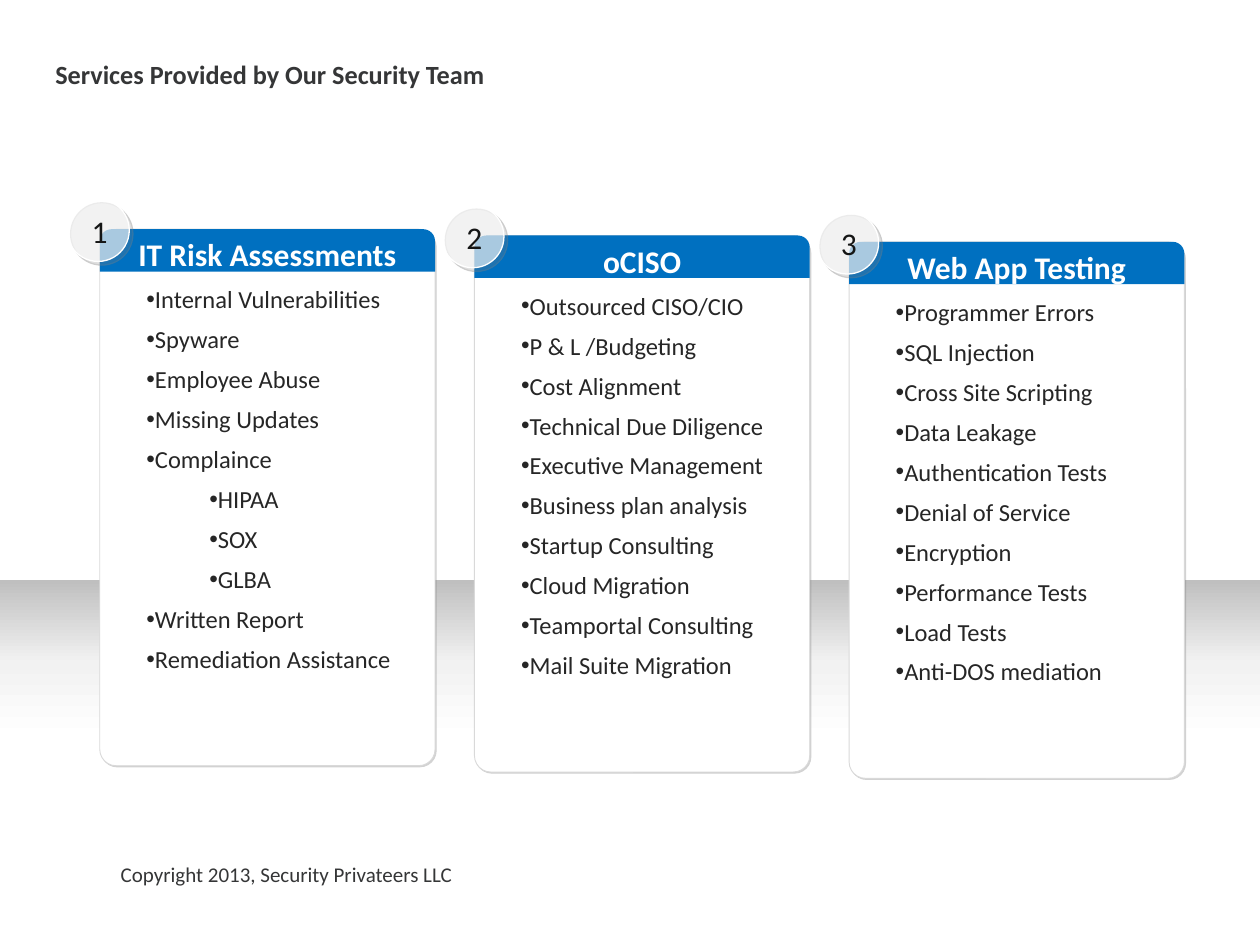
from lxml import etree
from pptx import Presentation
from pptx.dml.color import RGBColor
from pptx.enum.shapes import MSO_SHAPE
from pptx.enum.text import MSO_ANCHOR, MSO_AUTO_SIZE, PP_ALIGN
from pptx.oxml.ns import qn
from pptx.util import Pt

RECTANGLE = MSO_SHAPE.RECTANGLE
ROUNDED = MSO_SHAPE.ROUNDED_RECTANGLE
ROUND_TOP = MSO_SHAPE.ROUND_2_SAME_RECTANGLE
OVAL = MSO_SHAPE.OVAL
MIDDLE = MSO_ANCHOR.MIDDLE
GROW = MSO_AUTO_SIZE.SHAPE_TO_FIT_TEXT
CENTER = PP_ALIGN.CENTER
FONT = "Calibri"

CARD_LEFT, CARD_TOP = 57, 131
CARD_WIDTH, CARD_HEIGHT = 191.6, 306.6
STEP_RIGHT, STEP_DOWN = 214.1, 3.6
FADE_STOPS = [(0, "BFBFBF"), (26, "F2F2F2"), (50, "FFFFFF")]

SERVICES = [
    ("IT Risk Assessments", [
        ("Internal Vulnerabilities", 0), ("Spyware", 0), ("Employee Abuse", 0),
        ("Missing Updates", 0), ("Complaince", 0), ("HIPAA", 1), ("SOX", 1),
        ("GLBA", 1), ("Written Report", 0), ("Remediation Assistance", 0)]),
    ("oCISO", [
        ("Outsourced CISO/CIO", 0), ("P & L /Budgeting", 0),
        ("Cost Alignment", 0), ("Technical Due Diligence", 0),
        ("Executive Management", 0), ("Business plan analysis", 0),
        ("Startup Consulting", 0), ("Cloud Migration", 0),
        ("Teamportal Consulting", 0), ("Mail Suite Migration", 0)]),
    ("Web App Testing", [
        ("Programmer Errors", 0), ("SQL Injection", 0),
        ("Cross Site Scripting", 0), ("Data Leakage", 0),
        ("Authentication Tests", 0), ("Denial of Service", 0),
        ("Encryption", 0), ("Performance Tests", 0), ("Load Tests", 0),
        ("Anti-DOS mediation", 0)]),
]


def color(value):
    return RGBColor.from_string(value)


def apply(target, values):
    for name, value in values.items():
        setattr(target, name, value)


def add_color(parent, value, alpha=100):
    node = etree.SubElement(parent, qn("a:srgbClr"), val=value)
    if alpha < 100:
        etree.SubElement(node, qn("a:alpha"), val=str(alpha * 1000))


def add_shape(shapes, kind, place, fill, line=None, adjustments=()):
    shape = shapes.add_shape(kind, *map(Pt, place))
    shape.shadow.inherit = False
    for index, value in enumerate(adjustments):
        shape.adjustments[index] = value
    shape.fill.solid()
    shape.fill.fore_color.rgb = color(fill)
    if line:
        shape.line.color.rgb = color(line[0])
        shape.line.width = Pt(line[1])
    else:
        shape.line.fill.background()
    return shape


def add_shadow(shape, value, alpha, distance):
    effects = shape._element.spPr.find(qn("a:effectLst"))
    shadow = etree.SubElement(
        effects, qn("a:outerShdw"), blurRad="0", dist=str(Pt(distance)),
        dir="2700000", algn="tl", rotWithShape="0")
    add_color(shadow, value, alpha)


def set_transparency(shape, alpha):
    node = shape._element.spPr.find(qn("a:solidFill"))[0]
    etree.SubElement(node, qn("a:alpha"), val=str(alpha * 1000))


def set_fade(shape, stops):
    shape.fill.gradient()
    gradient = shape._element.spPr.find(qn("a:gradFill"))
    stop_list = gradient.find(qn("a:gsLst"))
    for old_stop in list(stop_list):
        stop_list.remove(old_stop)
    for position, value in stops:
        stop = etree.SubElement(stop_list, qn("a:gs"), pos=str(position * 1000))
        add_color(stop, value)
    shape.fill.gradient_angle = 270


def write(para, text, size, value, bold=False):
    span = para.add_run()
    span.text = text
    apply(span.font, {"name": FONT, "size": Pt(size), "bold": bold})
    span.font.color.rgb = color(value)


def add_box(shapes, place, **frame_values):
    box = shapes.add_textbox(*map(Pt, place))
    apply(box.text_frame, {"word_wrap": True, "auto_size": GROW, **frame_values})
    return box.text_frame


def add_bullet(para, level):
    para.level = level
    properties = para._p.get_or_add_pPr()
    properties.set("marL", str(Pt(36 * level)))
    properties.set("indent", str(Pt(13.5)))
    etree.SubElement(properties, qn("a:buFont"), typeface="Arial")
    etree.SubElement(properties, qn("a:buChar"), char="•")


def add_list(shapes, place, items):
    frame = add_box(shapes, place)
    for index, (text, level) in enumerate(items):
        para = frame.add_paragraph() if index else frame.paragraphs[0]
        para.space_after = Pt(6)
        add_bullet(para, level)
        write(para, text, 14, "262626")


def add_card(page, left, top, heading, items):
    shapes = page.shapes.add_group_shape().shapes
    card = add_shape(shapes, ROUNDED, (left, top, CARD_WIDTH, CARD_HEIGHT),
                     "FFFFFF", ("D9D9D9", 0.5), [0.049])
    add_shadow(card, "7F7F7F", 35, 1)
    add_shape(shapes, ROUND_TOP, (left, top, CARD_WIDTH, 24.2), "0070C0",
              adjustments=[0.278, 0])
    frame = add_box(shapes, (left, top, CARD_WIDTH, 29))
    para = frame.paragraphs[0]
    apply(para, {"alignment": CENTER, "space_after": Pt(6)})
    write(para, heading, 18, "FFFFFF", True)
    add_list(shapes, (left + 6.1, top + 28, 174, 273), items)


def add_badge(page, left, top, number):
    shapes = page.shapes.add_group_shape().shapes
    disc = add_shape(shapes, OVAL, (left, top, 35.6, 35.6), "FFFFFF",
                     ("FFFFFF", 0.75))
    set_transparency(disc, 62)
    add_shadow(disc, "808080", 40, 3)
    frame = add_box(shapes, (left + 7, top + 3.6, 24.5, 29), word_wrap=False)
    write(frame.paragraphs[0], str(number), 18, "151616")


def main():
    deck = Presentation()
    apply(deck, {"slide_width": Pt(720), "slide_height": Pt(540)})
    page = deck.slides.add_slide(deck.slide_layouts[6])

    floor = add_shape(page.shapes, RECTANGLE, (0, 331.6, 720, 181.4), "FFFFFF")
    set_fade(floor, FADE_STOPS)

    footer = add_box(page.shapes, (69, 485.5, 220, 28), auto_size=None,
                     vertical_anchor=MIDDLE, margin_left=0, margin_top=0,
                     margin_right=0, margin_bottom=0)
    write(footer.paragraphs[0], "Copyright 2013, Security Privateers LLC",
          12, "353637")
    title = add_box(page.shapes, (24.5, 29.5, 353.5, 25.2))
    write(title.paragraphs[0], "Services Provided by Our Security Team",
          15, "353637", True)

    for index, (heading, items) in enumerate(SERVICES):
        left = CARD_LEFT + index * STEP_RIGHT
        top = CARD_TOP + index * STEP_DOWN
        add_card(page, left, top, heading, items)
        add_badge(page, left - 18.7, top - 17.2, index + 1)

    deck.save("out.pptx")


if __name__ == "__main__":
    main()
